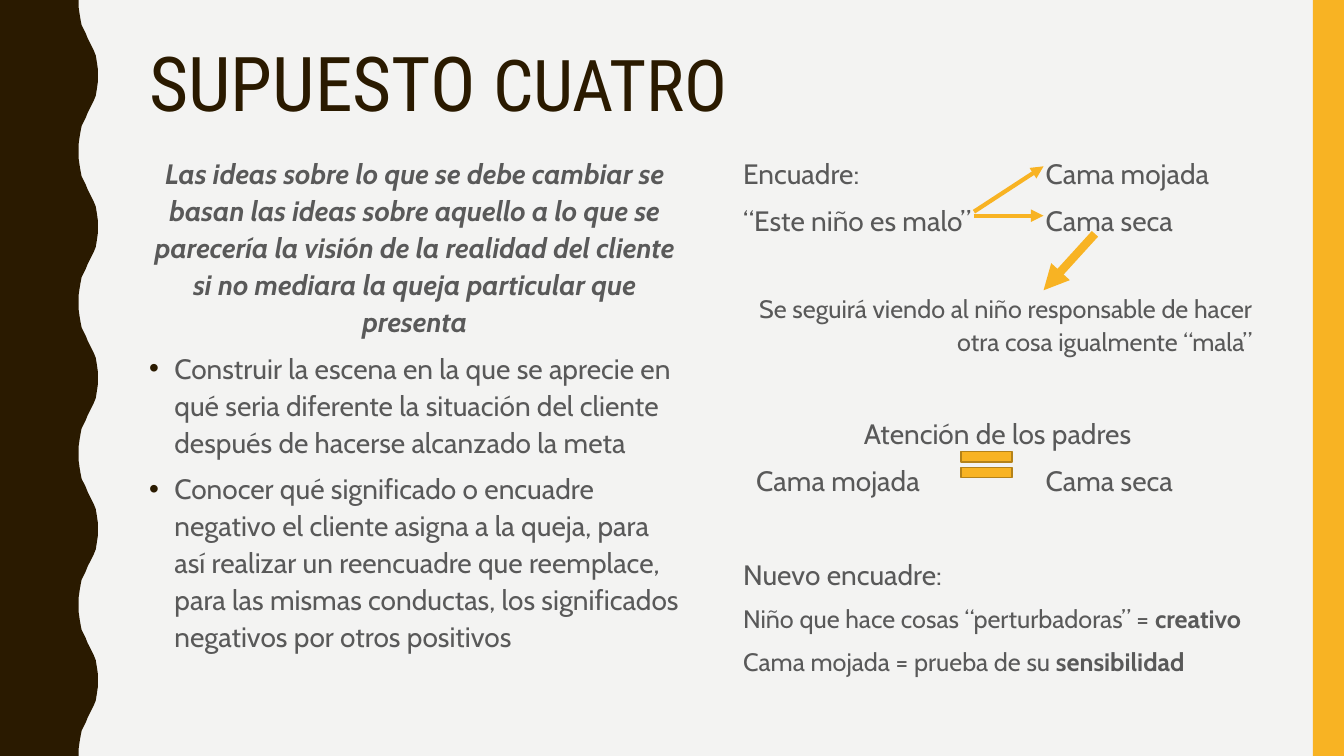
from dataclasses import dataclass

from lxml import etree
from pptx import Presentation
from pptx.dml.color import RGBColor
from pptx.enum import shapes, text
from pptx.oxml import ns
from pptx.util import Inches, Pt


@dataclass(frozen=True)
class Theme:
    paper: str = "F3F3F2"
    dark: str = "2A1A00"
    gold: str = "F8B323"
    gold_edge: str = "B48219"
    ink: str = "595959"
    title_font: str = "Roboto Condensed"
    body_font: str = "Cabin"
    title_size: int = 54
    title_small: int = 51
    body_size: int = 20
    note_size: int = 18
    gap: int = 7
    wide_gap: float = 40.5


THEME = Theme()
LEFT, CENTER, RIGHT = text.PP_ALIGN.LEFT, text.PP_ALIGN.CENTER, text.PP_ALIGN.RIGHT

TITLE = [("SUPUESTO ", THEME.title_size), ("CUATRO", THEME.title_small)]

PREMISE = [
    dict(runs=[("Las ideas sobre lo que se debe cambiar se basan las ideas sobre aquello "
                "a lo que se parecería la visión de la realidad del cliente si no mediara "
                "la queja particular que presenta", True)],
         align=CENTER, italic=True, before=0),
    dict(runs=[("Construir la escena en la que se aprecie en qué seria diferente la "
                "situación del cliente después de hacerse alcanzado la meta", False)],
         bullet=True),
    dict(runs=[("Conocer qué significado o encuadre negativo el cliente asigna a la queja, "
                "para así realizar un reencuadre que reemplace, para las mismas conductas, "
                "los significados negativos por otros positivos", False)],
         bullet=True),
]

FRAMING = [
    dict(runs=[("Encuadre:\tCama mojada", False)], before=0),
    dict(runs=[("“Este niño es malo”\tCama seca", False)]),
    dict(runs=[("Se seguirá viendo al niño responsable de hacer otra cosa igualmente “mala”",
                False)],
         align=RIGHT, size=THEME.note_size, before=38),
    dict(runs=[("Atención de los padres", False)], align=CENTER, before=THEME.wide_gap),
    dict(runs=[("Cama mojada\tCama seca", False)], first_indent=0.13),
    dict(runs=[("Nuevo encuadre:", False)], before=THEME.wide_gap),
    dict(runs=[("Niño que hace cosas “perturbadoras” = ", False), ("creativo", True)],
         size=THEME.note_size),
    dict(runs=[("Cama mojada = prueba de su ", False), ("sensibilidad", True)],
         size=THEME.note_size),
]
TAB_WIDTH = 3

ARROWS = [
    ((9.66, 2.1), (10.35, 1.65), 3),
    ((9.66, 2.14), (10.35, 2.14), 3),
    ((10.86, 2.32), (10.35, 2.88), 6),
]

WAVE_PERIOD, WAVE_COUNT = 1.5, 5
HALF_WAVE = [
    (0.78, 0), (0.78, 0.07), (0.79, 0.14), (0.8, 0.2), (0.81, 0.25),
    (0.83, 0.29), (0.85, 0.33), (0.87, 0.38), (0.89, 0.42), (0.91, 0.46),
    (0.93, 0.5), (0.95, 0.55), (0.96, 0.61), (0.97, 0.68), (0.97, 0.75),
]


def rgb(value):
    return RGBColor.from_string(value)


def paint(shape, fill, edge=None):
    shape.shadow.inherit = False
    shape.fill.solid()
    shape.fill.fore_color.rgb = rgb(fill)
    if edge:
        shape.line.color.rgb = rgb(edge)
        shape.line.width = Pt(1)
    else:
        shape.line.fill.background()


def place(holder, left, top, width, height):
    holder.left, holder.top = Inches(left), Inches(top)
    holder.width, holder.height = Inches(width), Inches(height)
    frame = holder.text_frame
    frame.word_wrap = True
    frame.auto_size = text.MSO_AUTO_SIZE.NONE
    frame.vertical_anchor = text.MSO_ANCHOR.TOP
    return frame


def set_font(paragraph, name, size, color):
    paragraph.font.name = name
    paragraph.font.size = Pt(size)
    paragraph.font.color.rgb = rgb(color)


def set_marker(paragraph, bullet, first_indent):
    props = paragraph.font._element.getparent()
    props.set("marL", str(Inches(0.25 if bullet else 0)))
    props.set("indent", str(Inches(-0.25 if bullet else first_indent)))
    props.set("defTabSz", str(Inches(TAB_WIDTH)))

    def add(tag, **attributes):
        node = etree.Element(ns.qn(tag), attributes)
        paragraph.font._element.addprevious(node)
        return node

    if bullet:
        etree.SubElement(add("a:buClr"), ns.qn("a:srgbClr"), val=THEME.dark)
        add("a:buFont", typeface="Arial")
        add("a:buChar", char="•")
    else:
        add("a:buNone")


def write_column(frame, entries):
    for index, entry in enumerate(entries):
        paragraph = frame.add_paragraph() if index else frame.paragraphs[0]
        paragraph.alignment = entry.get("align", LEFT)
        paragraph.line_spacing = 1.1
        paragraph.space_before = Pt(entry.get("before", THEME.gap))
        set_font(paragraph, THEME.body_font, entry.get("size", THEME.body_size), THEME.ink)
        paragraph.font.italic = entry.get("italic", False)
        set_marker(paragraph, entry.get("bullet", False), entry.get("first_indent", 0))
        for words, bold in entry["runs"]:
            run = paragraph.add_run()
            run.text = words
            run.font.bold = bold


def write_title(frame):
    heading = frame.paragraphs[0]
    heading.alignment = LEFT
    heading.line_spacing = 0.9
    set_font(heading, THEME.title_font, THEME.title_size, THEME.dark)
    for words, size in TITLE:
        run = heading.add_run()
        run.text = words
        run.font.size = Pt(size)


def draw_wave(slide):
    mirrored = [(x, WAVE_PERIOD - y) for x, y in reversed(HALF_WAVE[:-1])]
    edge = [(x, y + WAVE_PERIOD * turn)
            for turn in range(WAVE_COUNT) for x, y in HALF_WAVE + mirrored]
    edge.append((0, WAVE_PERIOD * WAVE_COUNT))
    outline = slide.shapes.build_freeform(0, 0)
    outline.add_line_segments([(Inches(x), Inches(y)) for x, y in edge], close=True)
    paint(outline.convert_to_shape(), THEME.dark)


def draw_arrow(slide, start, end, width):
    arrow = slide.shapes.add_connector(
        shapes.MSO_CONNECTOR.STRAIGHT, *map(Inches, start + end))
    arrow.line.color.rgb = rgb(THEME.gold)
    arrow.line.width = Pt(width)
    etree.SubElement(arrow.line._get_or_add_ln(), ns.qn("a:tailEnd"), type="triangle")
    etree.SubElement(arrow._element.spPr, ns.qn("a:effectLst"))


def main():
    deck = Presentation()
    deck.slide_width, deck.slide_height = Inches(13.33), Inches(7.5)
    slide = deck.slides.add_slide(deck.slide_layouts.get_by_name("Two Content"))
    slide.background.fill.solid()
    slide.background.fill.fore_color.rgb = rgb(THEME.paper)

    draw_wave(slide)
    stripe = slide.shapes.add_shape(
        shapes.MSO_SHAPE.RECTANGLE, *map(Inches, (13.02, 0, 0.31, 7.5)))
    paint(stripe, THEME.gold)

    heading, premise, framing = list(slide.placeholders)[:3]
    write_title(place(heading, 1.38, 0.41, 11.13, 1.06))
    write_column(place(premise, 1.38, 1.47, 5.47, 5.62), PREMISE)
    write_column(place(framing, 7.27, 1.47, 5.25, 5.62), FRAMING)

    equals = slide.shapes.add_shape(
        shapes.MSO_SHAPE.MATH_EQUAL, *map(Inches, (9.44, 4.39, 0.69, 0.44)))
    paint(equals, THEME.gold, THEME.gold_edge)
    for start, end, width in ARROWS:
        draw_arrow(slide, start, end, width)

    deck.save("out.pptx")


if __name__ == "__main__":
    main()
